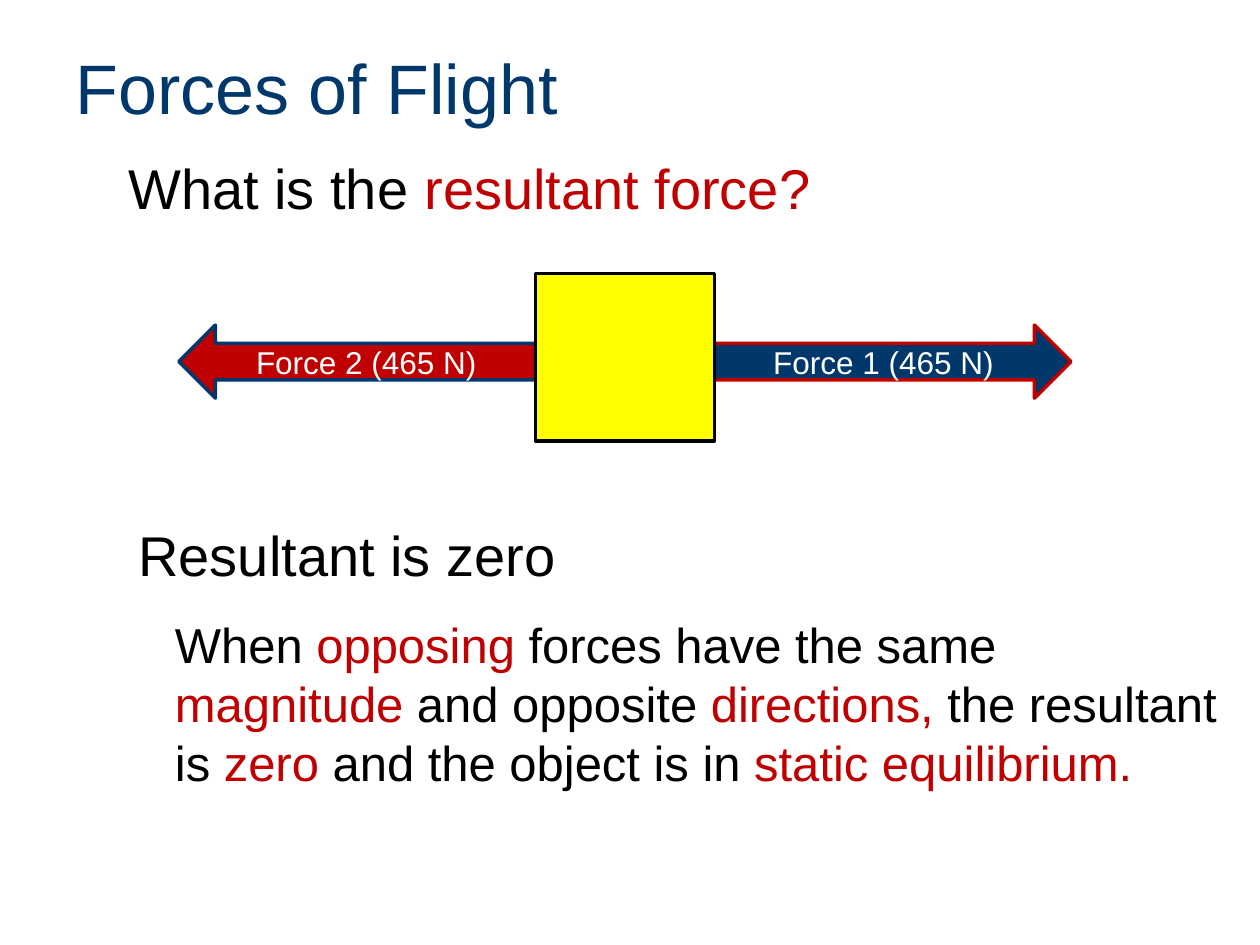
from pptx import Presentation
from pptx import util as u
from pptx.dml.color import RGBColor
from pptx.enum import shapes, text

NAVY, RED, BLACK, WHITE, YELLOW = "00386B", "C00000", "000000", "FFFFFF", "FFFF00"
WIDE, HIGH = 10, 7.5

TITLE = "Forces of Flight"
# Place, size, then pieces that alternate between black and red
NOTES = [
    ((0.92, 1.17, 8.42, 0.64), 32, ["What is the ", "resultant force?"]),
    ((1, 4.08, 3.67, 0.64), 32, ["Resultant is zero"]),
    ((1.29, 4.83, 8.5, 1.51), 28, [
        "When ", "opposing", " forces have the same ", "magnitude",
        " and opposite ", "directions,", " the resultant is ", "zero",
        " and the object is in ", "static equilibrium."]),
]
# Label, preset, side of the box, fill, line
ARROWS = [
    ("Force 1 (465 N)", shapes.MSO_SHAPE.RIGHT_ARROW, 1, NAVY, RED),
    ("Force 2 (465 N)", shapes.MSO_SHAPE.LEFT_ARROW, -1, RED, NAVY),
]
BOX_W, BOX_H, BOX_TOP = 1.42, 1.33, 2.17
ARROW_W, ARROW_H, ARROW_TOP = 2.83, 0.58, 2.58


def color(code):
    return RGBColor.from_string(code)


def style(font, size, code):
    font.name, font.size = "Arial", u.Pt(size)
    font.color.rgb = color(code)


def place(*sides):
    return [u.Inches(side) for side in sides]


def add_shape(kind, sides, fill, line):
    shape = slide.shapes.add_shape(kind, *place(*sides))
    shape.shadow.inherit = False
    shape.fill.solid()
    shape.fill.fore_color.rgb = color(fill)
    shape.line.color.rgb = color(line)
    shape.line.width = u.Pt(2)
    return shape


deck = Presentation()
deck.slide_width, deck.slide_height = place(WIDE, HIGH)
slide = deck.slides.add_slide(deck.slide_layouts[5])

title = slide.shapes.title
title.left, title.top, title.width, title.height = place(0.5, 0.3, 9, 0.78)
title.text_frame.text = TITLE
title.text_frame.vertical_anchor = text.MSO_ANCHOR.MIDDLE
head = title.text_frame.paragraphs[0]
head.alignment = text.PP_ALIGN.LEFT
style(head.font, 40, NAVY)

for sides, size, parts in NOTES:
    frame = slide.shapes.add_textbox(*place(*sides)).text_frame
    frame.word_wrap = True
    frame.auto_size = text.MSO_AUTO_SIZE.SHAPE_TO_FIT_TEXT
    for i, part in enumerate(parts):
        run = frame.paragraphs[0].add_run()
        run.text = part
        style(run.font, size, RED if i % 2 else BLACK)

mid = 4.25 + BOX_W / 2
for label, kind, side, fill, line in ARROWS:
    left = mid + side * (BOX_W + ARROW_W) / 2 - ARROW_W / 2
    arrow = add_shape(kind, (left, ARROW_TOP, ARROW_W, ARROW_H), fill, line)
    frame = arrow.text_frame
    frame.text = label
    frame.vertical_anchor = text.MSO_ANCHOR.MIDDLE
    frame.paragraphs[0].alignment = text.PP_ALIGN.CENTER
    style(frame.paragraphs[0].font, 18, WHITE)

add_shape(shapes.MSO_SHAPE.RECTANGLE,
          (mid - BOX_W / 2, BOX_TOP, BOX_W, BOX_H), YELLOW, BLACK)

deck.save("out.pptx")
